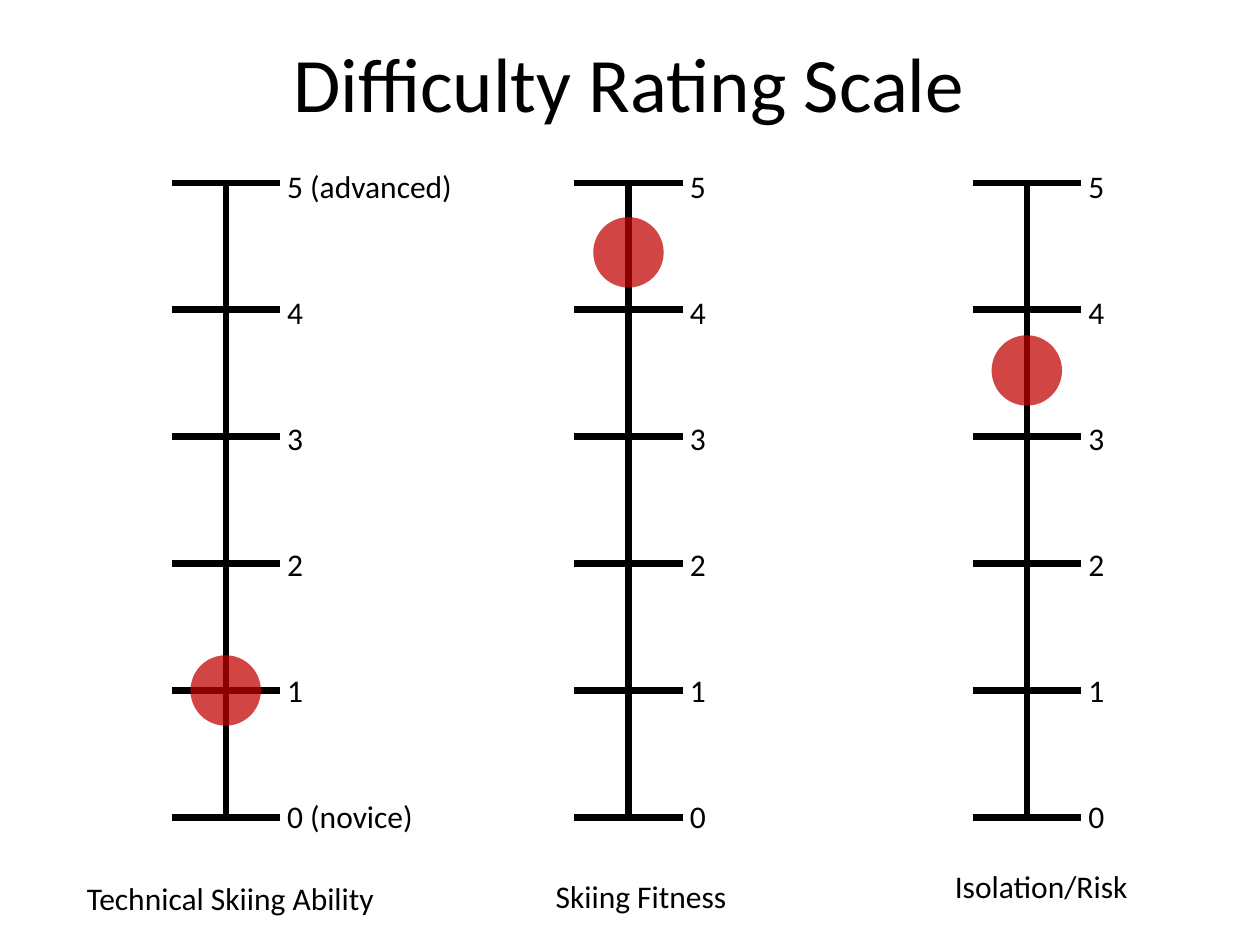
import pptx
import pptx.util
import pptx.dml.color
import pptx.enum.shapes
import pptx.enum.text
import pptx.oxml.ns
import lxml.etree

Cm = pptx.util.Cm
ALIGN = pptx.enum.text.PP_ALIGN
COLORS = {"ink": "000000", "marker": "C00000"}


def add_text(shapes, text, left, top, width, height=1.02, size=18, align=ALIGN.LEFT):
    sp = shapes.add_textbox(Cm(left), Cm(top), Cm(width), Cm(height))
    tf = sp.text_frame
    tf.word_wrap = True
    tf.vertical_anchor = pptx.enum.text.MSO_ANCHOR.MIDDLE
    p = tf.paragraphs[0]
    p.alignment = align
    r = p.add_run()
    r.text = text
    for name, value in {"name": "Calibri", "size": pptx.util.Pt(size)}.items():
        setattr(r.font, name, value)
    r.font.color.rgb = pptx.dml.color.RGBColor.from_string(COLORS["ink"])


def add_line(shapes, x1, y1, x2, y2):
    line = shapes.add_connector(pptx.enum.shapes.MSO_CONNECTOR.STRAIGHT,
                                Cm(x1), Cm(y1), Cm(x2), Cm(y2))
    line.line.width = pptx.util.Pt(3.5)
    line.line.color.rgb = pptx.dml.color.RGBColor.from_string(COLORS["ink"])
    lxml.etree.SubElement(line._element.spPr, pptx.oxml.ns.qn("a:effectLst"))


prs = pptx.Presentation()
prs.slide_width, prs.slide_height = Cm(25.4), Cm(19.05)
s = prs.slides.add_slide(prs.slide_layouts[6])

# Scales: axis x, rating, end labels, caption (text, left, top, width, alignment)
scales = [
    (4.55, 1, {5: "5 (advanced)", 0: "0 (novice)"},
     ("Technical Skiing Ability", 1.5, 17.6, 6.96, ALIGN.LEFT)),
    (12.67, 4.45, {}, ("Skiing Fitness", 10.46, 17.56, 4.93, ALIGN.CENTER)),
    (20.7, 3.52, {}, ("Isolation/Risk", 19, 17.34, 4.93, ALIGN.LEFT)),
]
top, step, label_top, label_step = 3.68, 2.56, 3.23, 2.54
bottom = top + 5 * step
half_tick, dot = 1.09, 1.42

for x, rating, end_labels, (caption, left, caption_top, width, align) in scales:
    add_text(s.shapes, caption, left, caption_top, width, align=align)

    # Axis, ticks and numbers
    scale = s.shapes.add_group_shape().shapes
    add_line(scale, x, top, x, bottom - 0.08)
    for i in range(6):
        y = top + i * step
        add_line(scale, x + half_tick, y, x - half_tick, y)
        value = 5 - i
        text = end_labels.get(value, str(value))
        add_text(scale, text, x + 0.99, label_top + i * label_step,
                 4.2 if value in end_labels else 0.84)

    # Translucent rating marker
    sp = s.shapes.add_shape(pptx.enum.shapes.MSO_SHAPE.OVAL, Cm(x - dot / 2),
                            Cm(bottom - rating * step - dot / 2), Cm(dot), Cm(dot))
    sp.shadow.inherit = False
    sp.line.fill.background()
    sp.fill.solid()
    sp.fill.fore_color.rgb = pptx.dml.color.RGBColor.from_string(COLORS["marker"])
    color = sp._element.spPr.find(".//" + pptx.oxml.ns.qn("a:srgbClr"))
    lxml.etree.SubElement(color, pptx.oxml.ns.qn("a:alpha"), val="73000")

# Title
add_text(s.shapes, "Difficulty Rating Scale", 1.25, 0.05, 22.86, 3.18, 44, ALIGN.CENTER)

prs.save("out.pptx")
